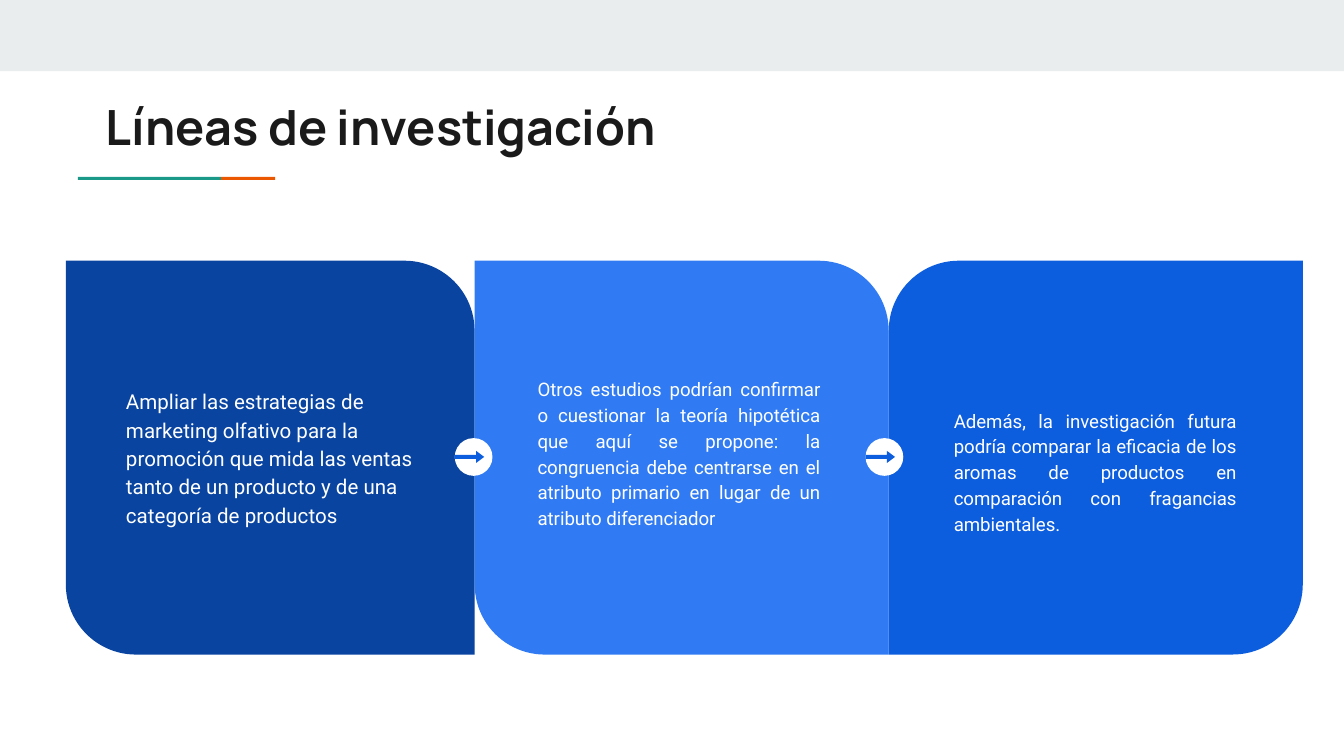
from dataclasses import dataclass

from pptx import Presentation
from pptx import util as u
from pptx.dml.color import RGBColor
from pptx.enum import shapes, text

COLORS = {
    "band": "E9EDEE", "green": "1A9988", "orange": "EB5600", "ink": "1A1A1A",
    "white": "FFFFFF", "navy": "0944A1", "sky": "307BF3", "blue": "0D5DDF",
}
SHAPE = shapes.MSO_SHAPE
ALIGN = text.PP_ALIGN
PANEL_TOP, PANEL_HEIGHT = 139.7, 211
CORNER = 0.178
BADGE_SIZE, BADGE_TOP = 20.2, 234.7
ARROW_WIDTH, ARROW_HEIGHT = 15.8, 6.5


@dataclass
class Box:
    left: float
    top: float
    width: float
    height: float


@dataclass
class TextStyle:
    font: str
    size: float
    color: str
    bold: bool = False
    align: ALIGN = ALIGN.LEFT
    spacing: float = 1.0


@dataclass
class Panel:
    left: float
    width: float
    color: str
    corners: tuple[float, float]
    wording: str
    text_box: Box
    style: TextStyle


def set_all(target, values: dict) -> None:
    for name, value in values.items():
        setattr(target, name, value)


def points(box: Box) -> list[u.Length]:
    return [u.Pt(value) for value in (box.left, box.top, box.width, box.height)]


def add_filled(slide, kind: SHAPE, box: Box, color: str,
               adjustments: tuple[float, ...] = ()) -> None:
    shape = slide.shapes.add_shape(kind, *points(box))
    for index, value in enumerate(adjustments):
        shape.adjustments[index] = value
    shape.shadow.inherit = False
    shape.fill.solid()
    shape.fill.fore_color.rgb = RGBColor.from_string(COLORS[color])
    shape.line.fill.background()


def add_text(slide, box: Box, wording: str, style: TextStyle) -> None:
    frame = slide.shapes.add_textbox(*points(box)).text_frame
    margins = {f"margin_{side}": u.Pt(7.2) for side in ("left", "top", "right", "bottom")}
    set_all(frame, {"word_wrap": True, "vertical_anchor": text.MSO_ANCHOR.TOP, **margins})
    paragraph = frame.paragraphs[0]
    set_all(paragraph, {"alignment": style.align, "line_spacing": style.spacing})
    run = paragraph.add_run()
    run.text = wording
    set_all(run.font, {"name": style.font, "size": u.Pt(style.size), "bold": style.bold})
    run.font.color.rgb = RGBColor.from_string(COLORS[style.color])


def add_panel(slide, panel: Panel) -> None:
    box = Box(panel.left, PANEL_TOP, panel.width, PANEL_HEIGHT)
    add_filled(slide, SHAPE.ROUND_2_DIAG_RECTANGLE, box, panel.color, panel.corners)
    add_text(slide, panel.text_box, panel.wording, panel.style)


def add_arrow_badge(slide, left: float) -> None:
    add_filled(slide, SHAPE.OVAL, Box(left, BADGE_TOP, BADGE_SIZE, BADGE_SIZE), "white")
    arrow_top = BADGE_TOP + (BADGE_SIZE - ARROW_HEIGHT) / 2
    add_filled(slide, SHAPE.RIGHT_ARROW, Box(left, arrow_top, ARROW_WIDTH, ARROW_HEIGHT),
               "blue", (0.32, 0.67))


TITLE = TextStyle("Manrope", 26, "ink", bold=True)
LEAD = TextStyle("Roboto", 11, "white", spacing=1.15)
BODY = TextStyle("Roboto", 10, "white", align=ALIGN.JUSTIFY, spacing=1.15)

PANELS = [
    Panel(35.3, 219, "navy", (0, CORNER),
          "Ampliar las estrategias de marketing olfativo para la promoción que mida "
          "las ventas tanto de un producto y de una categoría de productos",
          Box(60.4, 199.5, 176.4, 69), LEAD),
    Panel(254.3, 221.8, "sky", (0, CORNER),
          "Otros estudios podrían confirmar o cuestionar la teoría hipotética que aquí "
          "se propone: la congruencia debe centrarse en el atributo primario en lugar "
          "de un atributo diferenciador",
          Box(280.9, 193.6, 165.6, 126), BODY),
    Panel(476.1, 221.8, "blue", (CORNER, 0),
          "Además, la investigación futura podría comparar la eficacia de los aromas de "
          "productos en comparación con fragancias ambientales.",
          Box(503.9, 210.4, 165.6, 69), BODY),
]


def main() -> None:
    presentation = Presentation()
    set_all(presentation, {"slide_width": u.Pt(720), "slide_height": u.Pt(405)})
    slide = presentation.slides.add_slide(presentation.slide_layouts[6])

    # Top band, title and two-colour underline
    add_filled(slide, SHAPE.RECTANGLE, Box(0, 0, 720, 38.2), "band")
    add_text(slide, Box(49.7, 44.6, 605.5, 42.5), "Líneas de investigación", TITLE)
    add_filled(slide, SHAPE.RECTANGLE, Box(41.8, 94.8, 76.6, 1.6), "green")
    add_filled(slide, SHAPE.RECTANGLE, Box(118.4, 94.8, 29, 1.6), "orange")

    # Research lines
    for panel in PANELS:
        add_panel(slide, panel)

    # Arrows between neighbouring panels
    for left in (243.6, 463.7):
        add_arrow_badge(slide, left)

    presentation.save("out.pptx")


if __name__ == "__main__":
    main()
